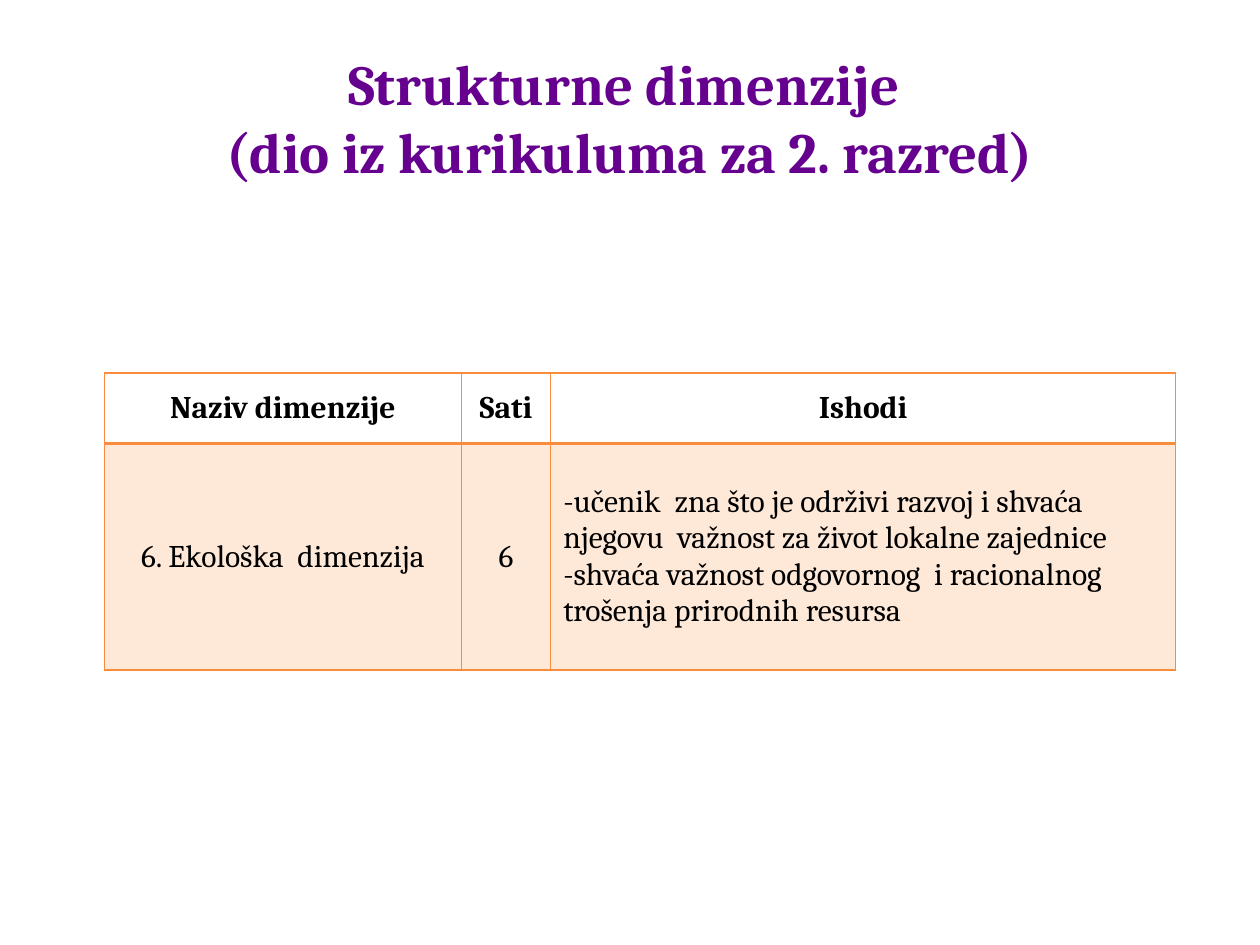
from dataclasses import dataclass

from lxml.etree import SubElement
from pptx import Presentation
from pptx.dml.color import RGBColor
from pptx.enum.text import MSO_ANCHOR, PP_ALIGN
from pptx.oxml.ns import qn
from pptx.util import Pt


@dataclass(frozen=True)
class Theme:
    font: str = "Cambria"
    title_color: RGBColor = RGBColor.from_string("66008F")
    text_color: RGBColor = RGBColor.from_string("000000")
    accent: RGBColor = RGBColor.from_string("FA8D3D")
    tint_percent: int = 20
    title_size: float = 32.4
    table_size: float = 18
    thin_line: float = 1
    header_line: float = 2.5


THEME = Theme()

TITLE = "Strukturne dimenzije \v(dio iz kurikuluma za 2. razred)"
HEADINGS = ["Naziv dimenzije", "Sati", "Ishodi"]
DIMENSION = ["6. Ekološka  dimenzija", "6"]
OUTCOMES = [
    "učenik  zna što je održivi razvoj i shvaća njegovu  važnost za život lokalne zajednice",
    "shvaća važnost odgovornog  i racionalnog trošenja prirodnih resursa",
]
COLUMN_WIDTHS = [203.8, 51.1, 357.1]
ROW_HEIGHTS = [40.3, 129.6]


def apply_format(target, values):
    for name, value in values.items():
        setattr(target, name, value)


def write_paragraph(paragraph, text, size, color, bold, align):
    paragraph.text = text
    paragraph.alignment = align
    apply_format(paragraph.font, {"name": THEME.font, "size": Pt(size), "bold": bold})
    for run in paragraph.runs:
        apply_format(run.font, {"name": THEME.font, "size": Pt(size), "bold": bold})
        run.font.color.rgb = color


def add_dash_bullet(paragraph):
    properties = paragraph._p.get_or_add_pPr()
    properties.set("marL", "0")
    properties.set("indent", "0")
    SubElement(properties, qn("a:buFont"), typeface=THEME.font)
    SubElement(properties, qn("a:buChar"), char="-")


def add_title(slide):
    title = slide.shapes.add_textbox(Pt(36), Pt(21.6), Pt(648), Pt(90))
    frame = title.text_frame
    apply_format(frame, {"word_wrap": True, "vertical_anchor": MSO_ANCHOR.MIDDLE})
    write_paragraph(frame.paragraphs[0], TITLE, THEME.title_size,
                    THEME.title_color, True, PP_ALIGN.CENTER)


def set_borders(cell, widths):
    properties = cell._tc.get_or_add_tcPr()
    for side, width in widths.items():
        line = SubElement(properties, qn(f"a:ln{side}"), w=str(Pt(width)))
        fill = SubElement(line, qn("a:solidFill"))
        SubElement(fill, qn("a:srgbClr"), val=str(THEME.accent))


def tint_cell(cell):
    cell.fill.solid()
    cell.fill.fore_color.rgb = THEME.accent
    color = cell._tc.tcPr.find(f"{qn('a:solidFill')}/{qn('a:srgbClr')}")
    SubElement(color, qn("a:alpha"), val=str(THEME.tint_percent * 1000))


def fill_cell(cell, lines, is_header, bulleted):
    cell.vertical_anchor = MSO_ANCHOR.MIDDLE
    frame = cell.text_frame
    for index, line in enumerate(lines):
        paragraph = frame.add_paragraph() if index else frame.paragraphs[0]
        write_paragraph(paragraph, line, THEME.table_size, THEME.text_color, is_header,
                        PP_ALIGN.LEFT if bulleted else PP_ALIGN.CENTER)
        if bulleted:
            add_dash_bullet(paragraph)
    widths = dict.fromkeys("LRTB", THEME.thin_line)
    widths["B" if is_header else "T"] = THEME.header_line
    set_borders(cell, widths)
    if is_header:
        cell.fill.background()
    else:
        tint_cell(cell)


def add_dimension_table(slide):
    rows = [[[heading] for heading in HEADINGS],
            [[value] for value in DIMENSION] + [OUTCOMES]]
    table = slide.shapes.add_table(
        len(rows), len(HEADINGS), Pt(59.8), Pt(213.1),
        Pt(sum(COLUMN_WIDTHS)), Pt(sum(ROW_HEIGHTS))).table
    apply_format(table, {"first_row": False, "horz_banding": False})
    for column, width in zip(table.columns, COLUMN_WIDTHS):
        column.width = Pt(width)
    for row, height in zip(table.rows, ROW_HEIGHTS):
        row.height = Pt(height)
    for row_index, row in enumerate(rows):
        for column_index, lines in enumerate(row):
            fill_cell(table.cell(row_index, column_index), lines,
                      is_header=row_index == 0, bulleted=lines is OUTCOMES)


def main():
    presentation = Presentation()
    apply_format(presentation, {"slide_width": Pt(720), "slide_height": Pt(540)})
    slide = presentation.slides.add_slide(presentation.slide_layouts[6])
    add_title(slide)
    add_dimension_table(slide)
    presentation.save("out.pptx")


if __name__ == "__main__":
    main()
